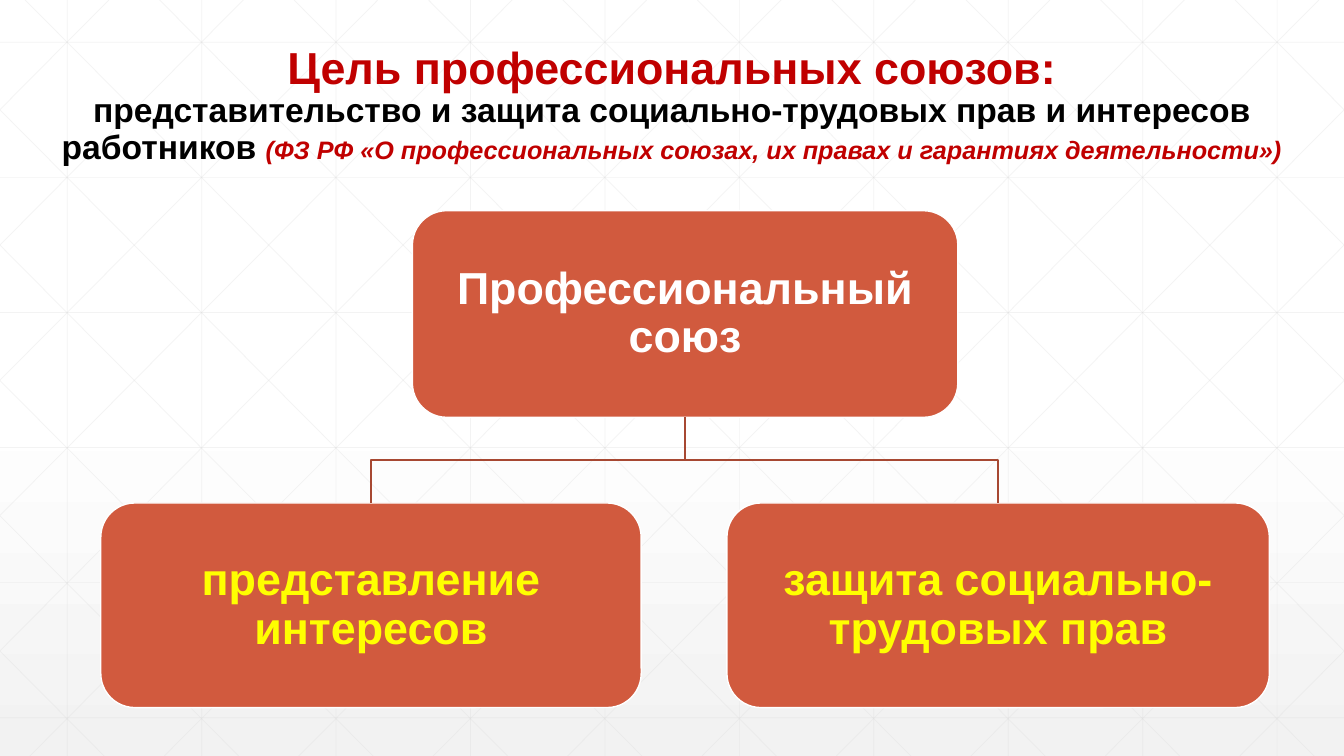
from lxml.etree import SubElement
from pptx import Presentation
from pptx.dml.color import RGBColor
from pptx.enum.shapes import MSO_CONNECTOR, MSO_SHAPE
from pptx.enum.text import MSO_ANCHOR, PP_ALIGN
from pptx.oxml.ns import qn
from pptx.util import Inches, Pt

WHITE = RGBColor(0xFF, 0xFF, 0xFF)
BLACK = RGBColor(0, 0, 0)
PALE_GRAY = RGBColor(0xF2, 0xF2, 0xF2)
GRID_GRAY = RGBColor(0xD9, 0xD9, 0xD9)
DARK_RED = RGBColor(0xC0, 0, 0)
BRICK = RGBColor(0xD1, 0x5A, 0x3E)
BROWN = RGBColor(0xA7, 0x48, 0x32)
YELLOW = RGBColor(0xFF, 0xFF, 0)

WIDTH, HEIGHT = 13.33, 7.5
GRID_STEP = 4 / 3
DIAGONAL_RUN = 7.45


class UnionSlide:
    font_name = "Arial"

    def __init__(self, slide):
        self.slide = slide
        self.shapes = slide.shapes

    def background(self):
        fill = self.slide.background.fill
        fill.gradient()
        fill.gradient_angle = 270
        for stop, position, color in zip(fill.gradient_stops, (0.53, 1), (WHITE, PALE_GRAY)):
            stop.position = position
            stop.color.rgb = color

    def grid_line(self, x1, y1, x2, y2):
        grid_line = self.shapes.add_connector(
            MSO_CONNECTOR.STRAIGHT, Inches(x1), Inches(y1), Inches(x2), Inches(y2))
        grid_line.line.width = Pt(0.5)
        grid_line.line.color.rgb = GRID_GRAY
        properties = grid_line._element.spPr
        color = next(properties.iter(qn("a:srgbClr")))
        SubElement(color, qn("a:alpha")).set("val", "30000")
        SubElement(properties, qn("a:effectLst"))

    def grid(self):
        for column in range(10):
            x = GRID_STEP * (column + 0.5)
            self.grid_line(x, 0, x, HEIGHT)
        for row in range(6):
            y = 0.42 + 1.34 * row
            self.grid_line(0, y, WIDTH, y)
        slope = HEIGHT / DIAGONAL_RUN
        for step in range(-5, 10):
            start = 0.25 + GRID_STEP * step
            left, right = max(start, 0), min(start + DIAGONAL_RUN, WIDTH)
            top, bottom = (left - start) * slope, (right - start) * slope
            self.grid_line(left, top, right, bottom)
            self.grid_line(WIDTH - left, top, WIDTH - right, bottom)

    def format_run(self, run, size, color, italic=False):
        run.font.name = self.font_name
        run.font.size = Pt(size)
        run.font.bold = True
        run.font.italic = italic
        run.font.color.rgb = color

    def title(self, heading, goal, law):
        title = self.shapes.add_textbox(Inches(0), Inches(-0.14), Inches(WIDTH), Inches(2.1))
        frame = title.text_frame
        frame.word_wrap = True
        frame.vertical_anchor = MSO_ANCHOR.BOTTOM
        frame.margin_bottom = Inches(0.31)
        paragraph = frame.paragraphs[0]
        paragraph.text = f"{heading}\v{goal}"
        paragraph.add_run().text = law
        paragraph.alignment = PP_ALIGN.CENTER
        paragraph.line_spacing = 0.9
        styles = ((32, DARK_RED), (24, BLACK), (18, DARK_RED, True))
        for run, style in zip(paragraph.runs, styles):
            self.format_run(run, *style)

    def card(self, text, left, top, width, height, color):
        card = self.shapes.add_shape(
            MSO_SHAPE.ROUNDED_RECTANGLE,
            Inches(left), Inches(top), Inches(width), Inches(height))
        card.shadow.inherit = False
        card.fill.solid()
        card.fill.fore_color.rgb = BRICK
        card.line.color.rgb = WHITE
        card.line.width = Pt(1)
        frame = card.text_frame
        frame.text = text
        frame.word_wrap = True
        frame.vertical_anchor = MSO_ANCHOR.MIDDLE
        frame.margin_left = frame.margin_right = Inches(0.02)
        frame.margin_top = frame.margin_bottom = Inches(0.02)
        paragraph = frame.paragraphs[0]
        paragraph.alignment = PP_ALIGN.CENTER
        paragraph.line_spacing = 0.9
        self.format_run(paragraph.runs[0], 32, color)
        return card

    def branch(self, parent, child):
        start_x = parent.left + parent.width // 2
        start_y = parent.top + parent.height
        end_x = child.left + child.width // 2
        middle_y = (start_y + child.top) // 2
        builder = self.shapes.build_freeform(start_x, start_y)
        builder.add_line_segments(
            [(start_x, middle_y), (end_x, middle_y), (end_x, child.top)], close=False)
        branch = builder.convert_to_shape()
        branch.shadow.inherit = False
        branch.fill.background()
        branch.line.color.rgb = BROWN
        branch.line.width = Pt(1)


def main():
    presentation = Presentation()
    presentation.slide_width = Inches(WIDTH)
    presentation.slide_height = Inches(HEIGHT)
    page = UnionSlide(presentation.slides.add_slide(presentation.slide_layouts[6]))
    page.background()
    page.grid()
    page.title(
        "Цель профессиональных союзов:",
        "представительство и защита социально-трудовых прав и интересов работников ",
        "(ФЗ РФ «О профессиональных союзах, их правах и гарантиях деятельности»)")
    union = page.card("Профессиональный союз", 4.09, 2.09, 5.41, 2.05, WHITE)
    interests = page.card("представление интересов", 1, 4.99, 5.36, 2.03, YELLOW)
    rights = page.card("защита социально-трудовых прав", 7.21, 4.99, 5.38, 2.03, YELLOW)
    for goal in (rights, interests):
        page.branch(union, goal)
    presentation.save("out.pptx")


if __name__ == "__main__":
    main()
